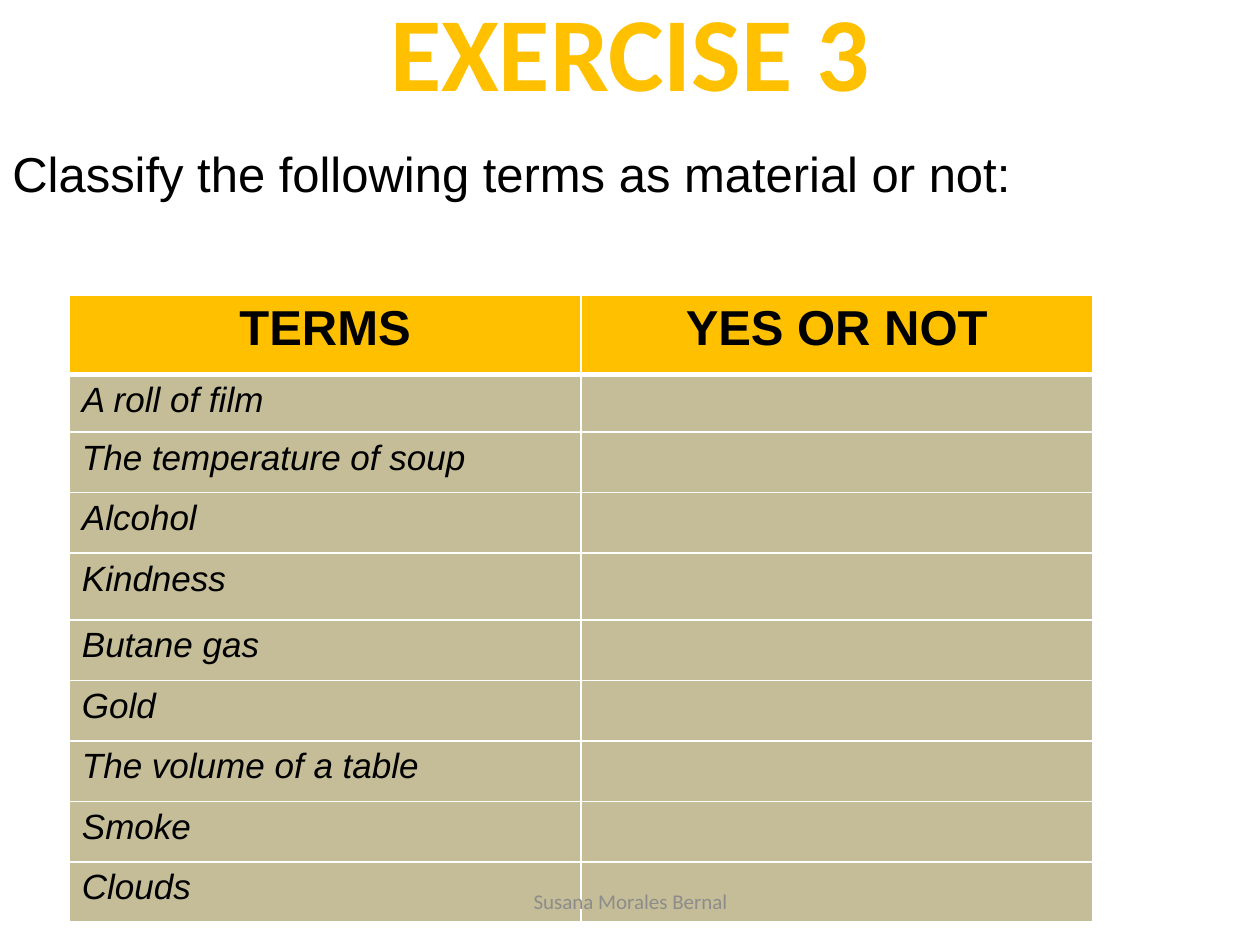
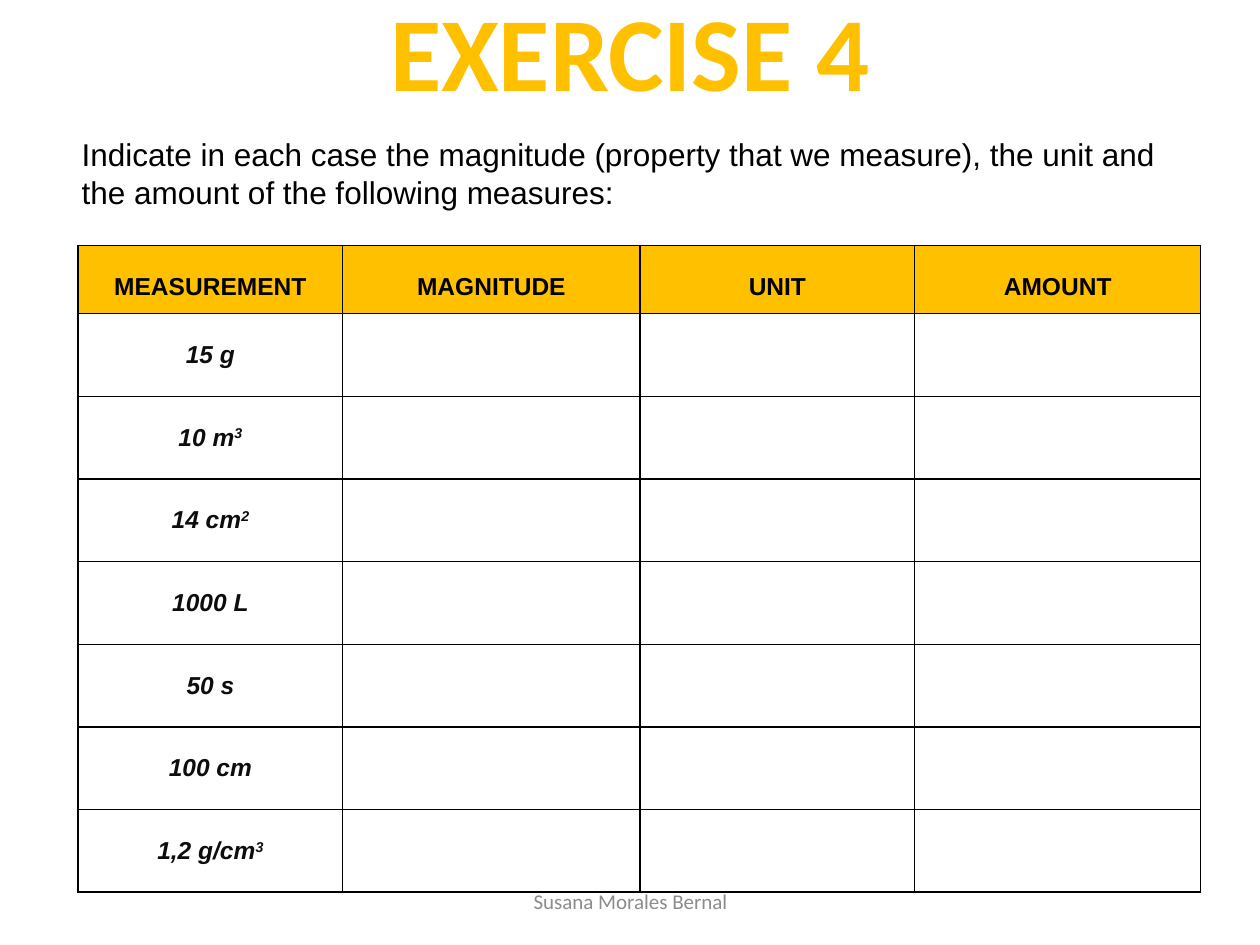
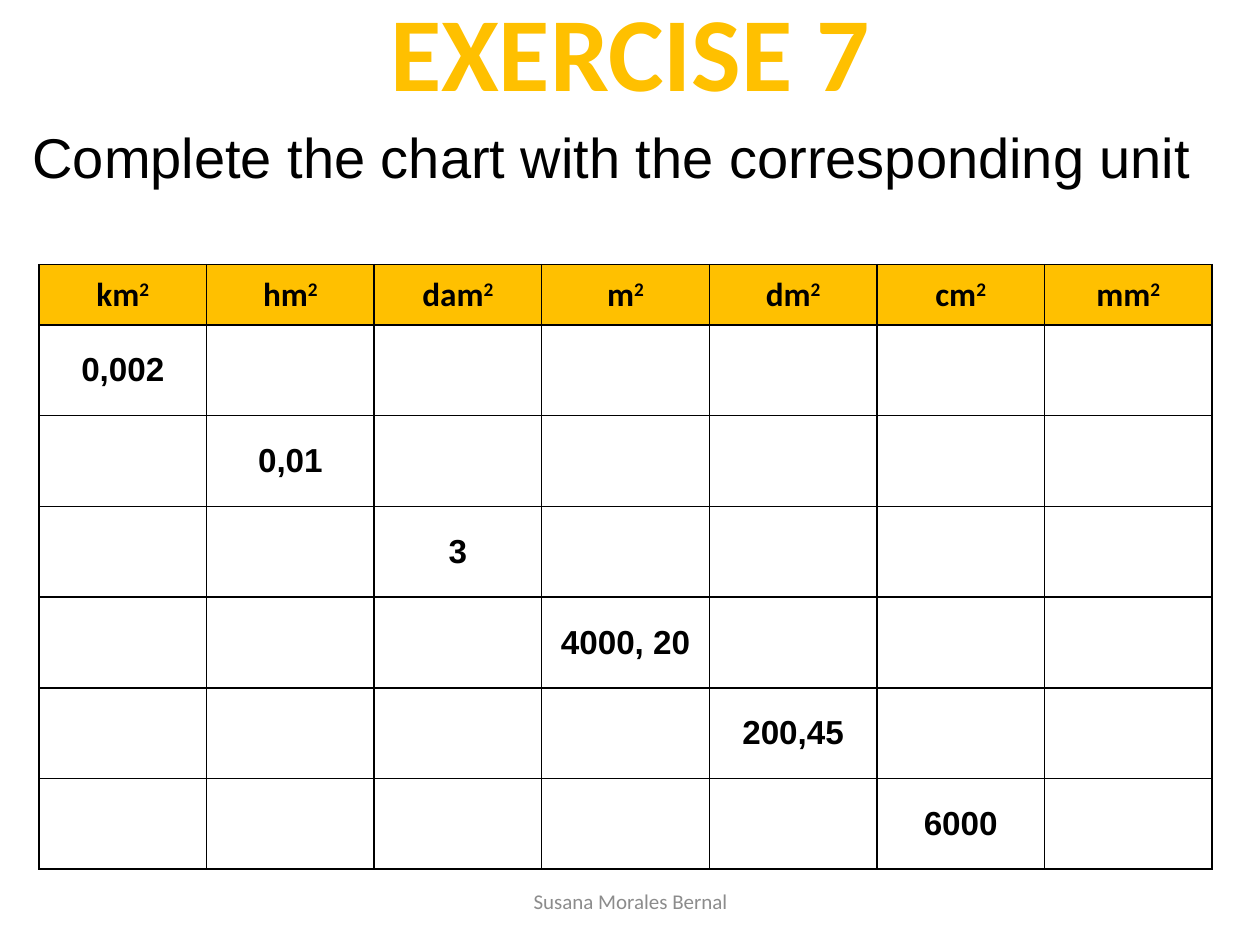
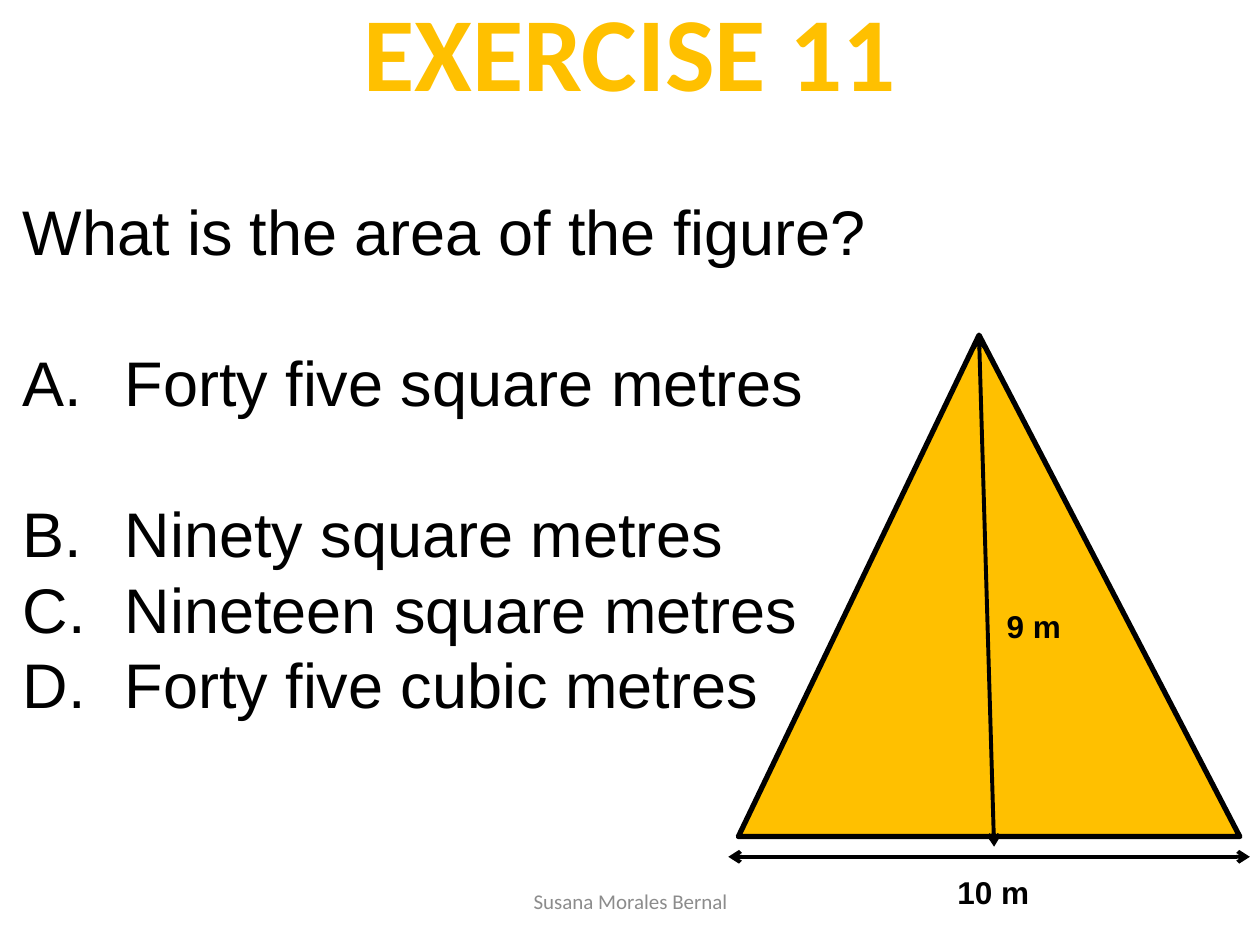
from dataclasses import dataclass, replace
from typing import NamedTuple, Optional

from lxml import etree
from pptx import Presentation
from pptx.dml import color
from pptx.enum import shapes, text
from pptx.oxml import ns
from pptx.util import Inches, Pt

GOLD = "FFC000"
KHAKI = "C4BD97"
BLACK = "000000"
WHITE = "FFFFFF"
LEFT, CENTER, JUSTIFY = text.PP_ALIGN.LEFT, text.PP_ALIGN.CENTER, text.PP_ALIGN.JUSTIFY
TOP, MIDDLE = text.MSO_ANCHOR.TOP, text.MSO_ANCHOR.MIDDLE
TITLE_AND_CONTENT, TITLE_ONLY = 1, 5


class Frame(NamedTuple):
    left: float
    top: float
    width: float
    height: float

    def lengths(self) -> list:
        return [Inches(value) for value in self]


class Border(NamedTuple):
    color: str
    points: float


class Margins(NamedTuple):
    left: float = 0.1
    top: float = 0.05
    right: float = 0.1
    bottom: float = 0.05


@dataclass(frozen=True)
class Style:
    size: float
    color: str = BLACK
    font: str = "Arial"
    bold: bool = False
    italic: bool = False
    align: text.PP_ALIGN = LEFT
    line_height: Optional[float] = None


@dataclass(frozen=True)
class CellLook:
    style: Style
    fill: Optional[str] = None
    anchor: text.MSO_ANCHOR = TOP
    margins: Margins = Margins()


@dataclass(frozen=True)
class Grid:
    left: float
    top: float
    columns: list
    heights: list
    rows: list
    header: CellLook
    body: CellLook
    border: Border
    header_rule: Border


TITLE_FRAME = Frame(0.5, -0.23, 9, 1.25)
TITLE_STYLE = Style(60, GOLD, "Calibri", bold=True, align=CENTER)
FOOTER_FRAME = Frame(3.42, 6.95, 3.17, 0.4)
FOOTER_STYLE = Style(12, "8C8C8C", "Calibri", align=CENTER)
LABEL_STYLE = Style(18, bold=True)
BLACK_RULE = Border(BLACK, 1)


def rgb(value: str) -> color.RGBColor:
    return color.RGBColor.from_string(value)


def format_para(para, style: Style) -> None:
    para.alignment = style.align
    if style.line_height:
        para.line_spacing = Pt(style.size * style.line_height)
    for span in para.runs:
        font = span.font
        font.name, font.size = style.font, Pt(style.size)
        font.bold, font.italic = style.bold, style.italic
        font.color.rgb = rgb(style.color)


def write(frame, words: str, style: Style) -> None:
    base, _, exponent = words.partition("^")
    frame.text = base
    para = frame.paragraphs[0]
    if exponent:
        span = para.add_run()
        span.text = exponent
        span.font._element.set("baseline", "30000")
    format_para(para, style)


def place(shape, frame: Frame) -> None:
    shape.left, shape.top, shape.width, shape.height = frame.lengths()


def add_text(page, frame: Frame, words: str, style: Style, anchor=TOP) -> None:
    box = page.shapes.add_textbox(*frame.lengths())
    box.text_frame.word_wrap = True
    box.text_frame.vertical_anchor = anchor
    write(box.text_frame, words, style)


def add_page(deck, title: str, layout: int = TITLE_ONLY):
    page = deck.slides.add_slide(deck.slide_layouts[layout])
    heading = page.shapes.title
    place(heading, TITLE_FRAME)
    heading.text_frame.auto_size = text.MSO_AUTO_SIZE.NONE
    heading.text_frame.vertical_anchor = MIDDLE
    write(heading.text_frame, title, TITLE_STYLE)
    return page


def add_footer(page) -> None:
    add_text(page, FOOTER_FRAME, "Susana Morales Bernal", FOOTER_STYLE, MIDDLE)


def set_borders(cell, sides: dict) -> None:
    properties = cell._tc.get_or_add_tcPr()
    for position, (side, border) in enumerate(sides.items()):
        line = etree.Element(ns.qn(f"a:ln{side}"), w=str(Pt(border.points)))
        fill = etree.SubElement(line, ns.qn("a:solidFill"))
        etree.SubElement(fill, ns.qn("a:srgbClr"), val=border.color)
        properties.insert(position, line)


def format_cell(cell, words: str, look: CellLook) -> None:
    cell.vertical_anchor = look.anchor
    cell.margin_left, cell.margin_top, cell.margin_right, cell.margin_bottom = (
        Inches(value) for value in look.margins
    )
    if look.fill:
        cell.fill.solid()
        cell.fill.fore_color.rgb = rgb(look.fill)
    else:
        cell.fill.background()
    if words:
        write(cell.text_frame, words, look.style)


def add_grid(page, grid: Grid) -> None:
    frame = Frame(grid.left, grid.top, sum(grid.columns), sum(grid.heights))
    table = page.shapes.add_table(
        len(grid.heights), len(grid.columns), *frame.lengths()
    ).table
    table.first_row = table.horz_banding = False
    for column, width in zip(table.columns, grid.columns):
        column.width = Inches(width)
    for row, height in zip(table.rows, grid.heights):
        row.height = Inches(height)
    for r, row in enumerate(grid.rows):
        for c, words in enumerate(row):
            cell = table.cell(r, c)
            format_cell(cell, words, grid.body if r else grid.header)
            sides = dict.fromkeys("LRTB", grid.border)
            if r == 0:
                sides["B"] = grid.header_rule
            elif r == 1:
                sides["T"] = grid.header_rule
            set_borders(cell, sides)


def add_arrow(page, start: tuple, end: tuple) -> None:
    arrow = page.shapes.add_connector(
        shapes.MSO_CONNECTOR.STRAIGHT, *(Inches(value) for value in start + end)
    )
    arrow.line.color.rgb = rgb(BLACK)
    arrow.line.width = Pt(2.25)
    line = arrow.line._get_or_add_ln()
    for tip in ("headEnd", "tailEnd"):
        etree.SubElement(line, ns.qn(f"a:{tip}"), type="arrow")
    etree.SubElement(arrow._element.spPr, ns.qn("a:effectLst"))


def set_bullet(para, numbered: bool) -> None:
    properties = para._p.get_or_add_pPr()
    indent = Inches(0.81) if numbered else 0
    properties.set("marL", str(indent))
    properties.set("indent", str(-indent))
    if numbered:
        etree.SubElement(properties, ns.qn("a:buFont"), typeface="+mj-lt")
        etree.SubElement(properties, ns.qn("a:buAutoNum"), type="alphaUcPeriod")
    else:
        etree.SubElement(properties, ns.qn("a:buNone"))


def add_question(page, frame: Frame, question: str, answers: list) -> None:
    style = Style(36, align=JUSTIFY, line_height=1.2)
    box = page.placeholders[1]
    place(box, frame)
    box.text_frame.auto_size = text.MSO_AUTO_SIZE.NONE
    box.text_frame.text = "\n".join([question, *answers])
    for index, para in enumerate(box.text_frame.paragraphs):
        format_para(para, style)
        para.space_before = Pt(43 if index in (1, 2) else 0)
        set_bullet(para, numbered=index > 0)


def build_terms(deck) -> None:
    page = add_page(deck, "EXERCISE 3")
    add_text(page, Frame(0, 1.09, 10, 0.57),
             "Classify the following terms as material or not:",
             Style(28, line_height=1.2))
    terms = ["A roll of film", "The temperature of soup", "Alcohol", "Kindness",
             "Butane gas", "Gold", "The volume of a table", "Smoke", "Clouds"]
    add_grid(page, Grid(
        left=0.55, top=2.34, columns=[4.06] * 2,
        heights=[0.63, 0.46, 0.48, 0.48, 0.53] + [0.48] * 5,
        rows=[["TERMS", "YES OR NOT"]] + [[term, ""] for term in terms],
        header=CellLook(Style(28, bold=True, align=CENTER), GOLD),
        body=CellLook(Style(20, italic=True), KHAKI),
        border=Border(WHITE, 1), header_rule=Border(WHITE, 3)))
    add_footer(page)


def build_measures(deck) -> None:
    page = add_page(deck, "EXERCISE 4")
    measures = ["15 g", "10 m^3", "14 cm^2", "1000 L", "50 s", "100 cm", "1,2 g/cm^3"]
    header_style = Style(14, bold=True, align=CENTER)
    body_style = replace(header_style, color="0D0D0D", italic=True)
    add_grid(page, Grid(
        left=0.62, top=1.95, columns=[2.1, 2.36, 2.18, 2.27],
        heights=[0.54] + [0.656] * len(measures),
        rows=[["MEASUREMENT", "MAGNITUDE", "UNIT", "AMOUNT"]]
        + [[measure, "", "", ""] for measure in measures],
        header=CellLook(header_style, GOLD, MIDDLE, Margins(0.07, 0.12, 0.07, 0)),
        body=CellLook(body_style, None, MIDDLE, Margins(0.07, 0, 0.07, 0)),
        border=BLACK_RULE, header_rule=BLACK_RULE))
    add_text(page, Frame(0.55, 1.02, 8.75, 0.71),
             "Indicate in each case the magnitude (property that we measure), "
             "the unit and the amount of the following measures:",
             Style(18, line_height=1.2))
    add_footer(page)


def build_units(deck) -> None:
    page = add_page(deck, "EXERCISE 7")
    units = ["km^2", "hm^2", "dam^2", "m^2", "dm^2", "cm^2", "mm^2"]
    values = ["0,002", "0,01", "3", "4000, 20", "200,45", "6000"]
    diagonal = [[value if column == row else "" for column in range(len(units))]
                for row, value in enumerate(values)]
    body_style = Style(19, bold=True, align=CENTER)
    header_style = replace(body_style, font="Calibri")
    add_grid(page, Grid(
        left=0.31, top=2.1, columns=[1.33] * len(units),
        heights=[0.48] + [0.72] * len(values),
        rows=[units] + diagonal,
        header=CellLook(header_style, GOLD, MIDDLE),
        body=CellLook(body_style, WHITE, MIDDLE),
        border=BLACK_RULE, header_rule=BLACK_RULE))
    add_text(page, Frame(0.16, 0.92, 9.69, 0.64),
             "Complete the chart with the corresponding unit",
             Style(32, align=JUSTIFY, line_height=1.2))
    add_footer(page)


def build_area(deck) -> None:
    page = add_page(deck, "EXERCISE 11", TITLE_AND_CONTENT)
    add_question(page, Frame(0.08, 1.48, 7.34, 3.74),
                 "What is the area of the figure?",
                 ["Forty five square metres", "Ninety square metres",
                  "Nineteen square metres", "Forty five cubic metres"])
    triangle = page.shapes.add_shape(
        shapes.MSO_SHAPE.ISOSCELES_TRIANGLE, *Frame(5.86, 2.66, 3.98, 3.98).lengths())
    triangle.adjustments[0] = 0.48
    triangle.shadow.inherit = False
    triangle.fill.solid()
    triangle.fill.fore_color.rgb = rgb(GOLD)
    triangle.line.color.rgb = rgb(BLACK)
    triangle.line.width = Pt(3)
    add_arrow(page, (7.89, 6.72), (7.77, 2.66))
    add_arrow(page, (5.78, 6.8), (9.92, 6.8))
    add_text(page, Frame(7.5, 6.88, 1.17, 0.4), "10 m", LABEL_STYLE)
    add_text(page, Frame(7.89, 4.77, 0.78, 0.4), "9 m", LABEL_STYLE)
    add_footer(page)


def main() -> None:
    deck = Presentation()
    deck.slide_width, deck.slide_height = Inches(10), Inches(7.5)
    for build in (build_terms, build_measures, build_units, build_area):
        build(deck)
    deck.save("out.pptx")


if __name__ == "__main__":
    main()
